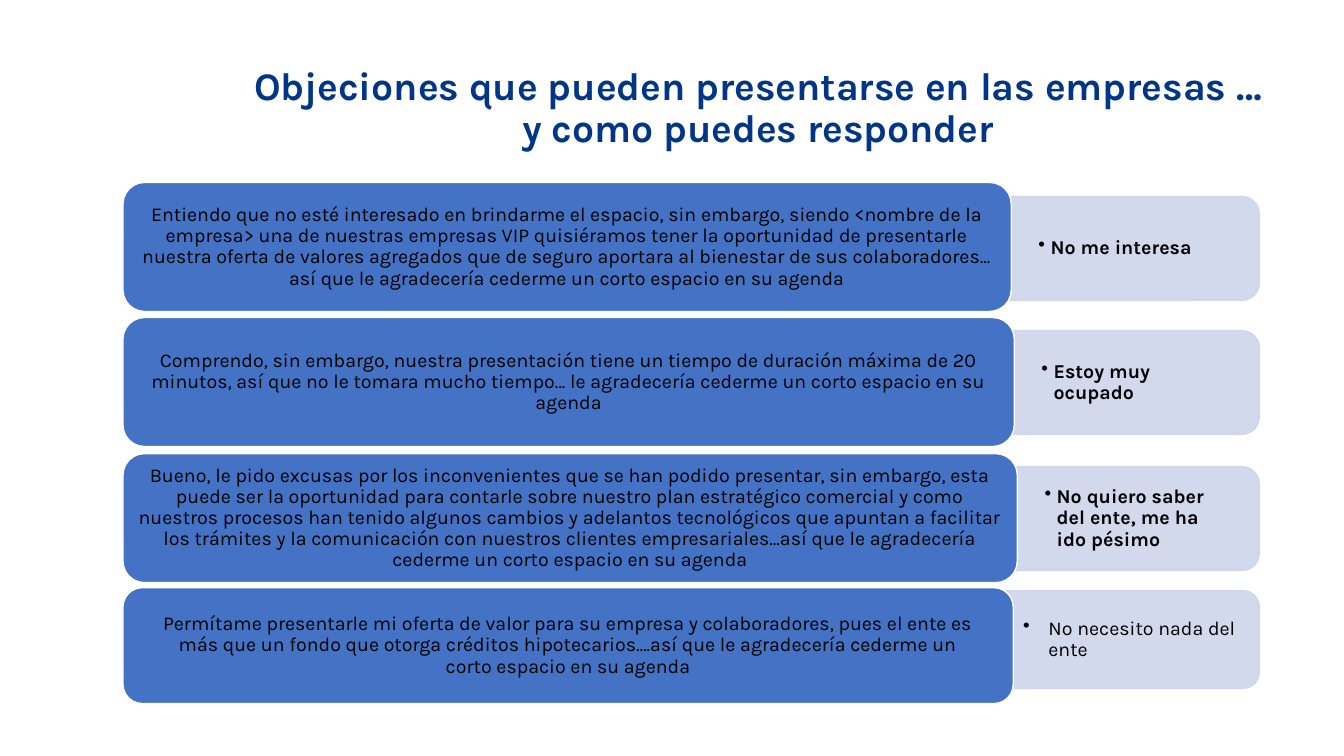
"""Build a slide of common client objections with a suggested answer to each."""
import dataclasses

import pptx
import pptx.dml.color
import pptx.enum.shapes
import pptx.enum.text
import pptx.oxml
import pptx.oxml.ns
import pptx.util
from pptx.util import Inches

MSO_SHAPE = pptx.enum.shapes.MSO_SHAPE
PP_ALIGN = pptx.enum.text.PP_ALIGN
MSO_ANCHOR = pptx.enum.text.MSO_ANCHOR


@dataclasses.dataclass(frozen=True)
class Theme:
    font: str = "Karla"
    title: str = "003685"
    answer: str = "4472C4"
    edge: str = "FFFFFF"
    tab: str = "CFD5EA"
    text: str = "000000"
    title_size: float = 27.9
    body_size: float = 14


THEME = Theme()


def add_card(shapes, kind, left, top, width, height, fill, line):
    sp = shapes.add_shape(kind, Inches(left), Inches(top), Inches(width), Inches(height))
    sp.shadow.inherit = False
    sp.fill.solid()
    sp.fill.fore_color.rgb = pptx.dml.color.RGBColor.from_string(fill)
    sp.line.color.rgb = pptx.dml.color.RGBColor.from_string(line)
    sp.line.width = pptx.util.Pt(1)
    return sp


def write(sp, text, size, color, bold, align, anchor, inset_x, inset_y):
    tf = sp.text_frame
    tf.word_wrap = True
    tf.auto_size = pptx.enum.text.MSO_AUTO_SIZE.NONE
    tf.vertical_anchor = anchor
    tf.margin_left = tf.margin_right = Inches(inset_x)
    tf.margin_top = tf.margin_bottom = Inches(inset_y)
    p = tf.paragraphs[0]
    p.alignment = align
    p.line_spacing = 0.9
    p.space_before = pptx.util.Pt(0)
    r = p.add_run()
    r.text = text
    r.font.name = THEME.font
    r.font.size = pptx.util.Pt(size)
    r.font.bold = bold
    r.font.color.rgb = pptx.dml.color.RGBColor.from_string(color)
    return p


prs = pptx.Presentation()
prs.slide_width, prs.slide_height = Inches(13.33), Inches(7.5)
s = prs.slides.add_slide(prs.slide_layouts[5])

title = s.shapes.title
title.left, title.top = Inches(2.33), Inches(0.61)
title.width, title.height = Inches(10.38), Inches(1.09)
write(title, "Objeciones que pueden presentarse en las empresas … y como puedes responder",
      THEME.title_size, THEME.title, True, PP_ALIGN.CENTER, MSO_ANCHOR.TOP, 0.1, 0.05)

ANSWER_LEFT, TAB_RIGHT, LABEL_RIGHT = 1.22, 12.49, 12.43

rows = [
    dict(objection="No me interesa",
         answer="Entiendo que no esté interesado en brindarme el espacio, sin embargo, siendo "
                "<nombre de la empresa> una de nuestras empresas VIP quisiéramos tener la "
                "oportunidad de presentarle nuestra oferta de valores agregados que de seguro "
                "aportara al bienestar de sus colaboradores... así que le agradecería cederme "
                "un corto espacio en su agenda",
         top=1.81, width=8.81, height=1.28, inset=0.06, tab_top=1.95, tab_height=1.03,
         bold=True, label_inset=0.27, indent=0.12),
    dict(objection="Estoy muy ocupado",
         answer="Comprendo, sin embargo, nuestra presentación tiene un tiempo de duración "
                "máxima de 20 minutos, así que no le tomara mucho tiempo... le agradecería "
                "cederme un corto espacio en su agenda",
         top=3.15, width=8.84, height=1.28, inset=0.06, tab_top=3.28, tab_height=1.03,
         bold=True, label_inset=0.27, indent=0.12),
    dict(objection="No quiero saber del ente, me ha ido pésimo",
         answer="Bueno, le pido excusas por los inconvenientes que se han podido presentar, sin "
                "embargo, esta puede ser la oportunidad para contarle sobre nuestro plan "
                "estratégico comercial y como nuestros procesos han tenido algunos cambios y "
                "adelantos tecnológicos que apuntan a facilitar los trámites y la comunicación "
                "con nuestros clientes empresariales...así que le agradecería cederme un corto "
                "espacio en su agenda",
         top=4.5, width=8.87, height=1.28, inset=0.06, tab_top=4.63, tab_height=1.03,
         bold=True, label_inset=0.27, indent=0.12),
    dict(objection="No necesito nada del ente",
         answer="Permítame presentarle mi oferta de valor para su empresa y colaboradores, pues "
                "el ente es más que un fondo que otorga créditos hipotecarios….así que le "
                "agradecería cederme un corto espacio en su agenda",
         top=5.83, width=8.83, height=1.15, inset=0.32, tab_top=5.86, tab_height=0.97,
         bold=False, label_inset=0.1, indent=0.25),
]

for row in rows:
    tab_left = ANSWER_LEFT + row["width"] - (0.98 if row is rows[-1] else 0.02)
    tab_width, tab_height = TAB_RIGHT - tab_left, row["tab_height"]
    tab = add_card(s.shapes, MSO_SHAPE.ROUND_2_SAME_RECTANGLE,
                   tab_left + (tab_width - tab_height) / 2,
                   row["tab_top"] + (tab_height - tab_width) / 2,
                   tab_height, tab_width, THEME.tab, THEME.tab)
    tab.rotation = 90
    for color in tab._element.spPr.iter(pptx.oxml.ns.qn("a:srgbClr")):
        color.append(pptx.oxml.parse_xml(
            f'<a:alpha {pptx.oxml.ns.nsdecls("a")} val="90000"/>'))

    label_left = ANSWER_LEFT + row["width"]
    label = s.shapes.add_textbox(Inches(label_left), Inches(row["tab_top"]),
                                 Inches(LABEL_RIGHT - label_left), Inches(tab_height))
    p = write(label, row["objection"], THEME.body_size, THEME.text, row["bold"],
              PP_ALIGN.LEFT, MSO_ANCHOR.MIDDLE, row["label_inset"], 0.05)
    pPr = p._p.get_or_add_pPr()
    pPr.set("marL", str(Inches(row["indent"])))
    pPr.set("indent", str(-Inches(row["indent"])))
    pPr.append(pptx.oxml.parse_xml(
        f'<a:buChar {pptx.oxml.ns.nsdecls("a")} char="•"/>'))

    answer = add_card(s.shapes, MSO_SHAPE.ROUNDED_RECTANGLE, ANSWER_LEFT, row["top"],
                      row["width"], row["height"], THEME.answer, THEME.edge)
    write(answer, row["answer"], THEME.body_size, THEME.text, False,
          PP_ALIGN.CENTER, MSO_ANCHOR.MIDDLE, row["inset"], 0.03)

prs.save("out.pptx")
